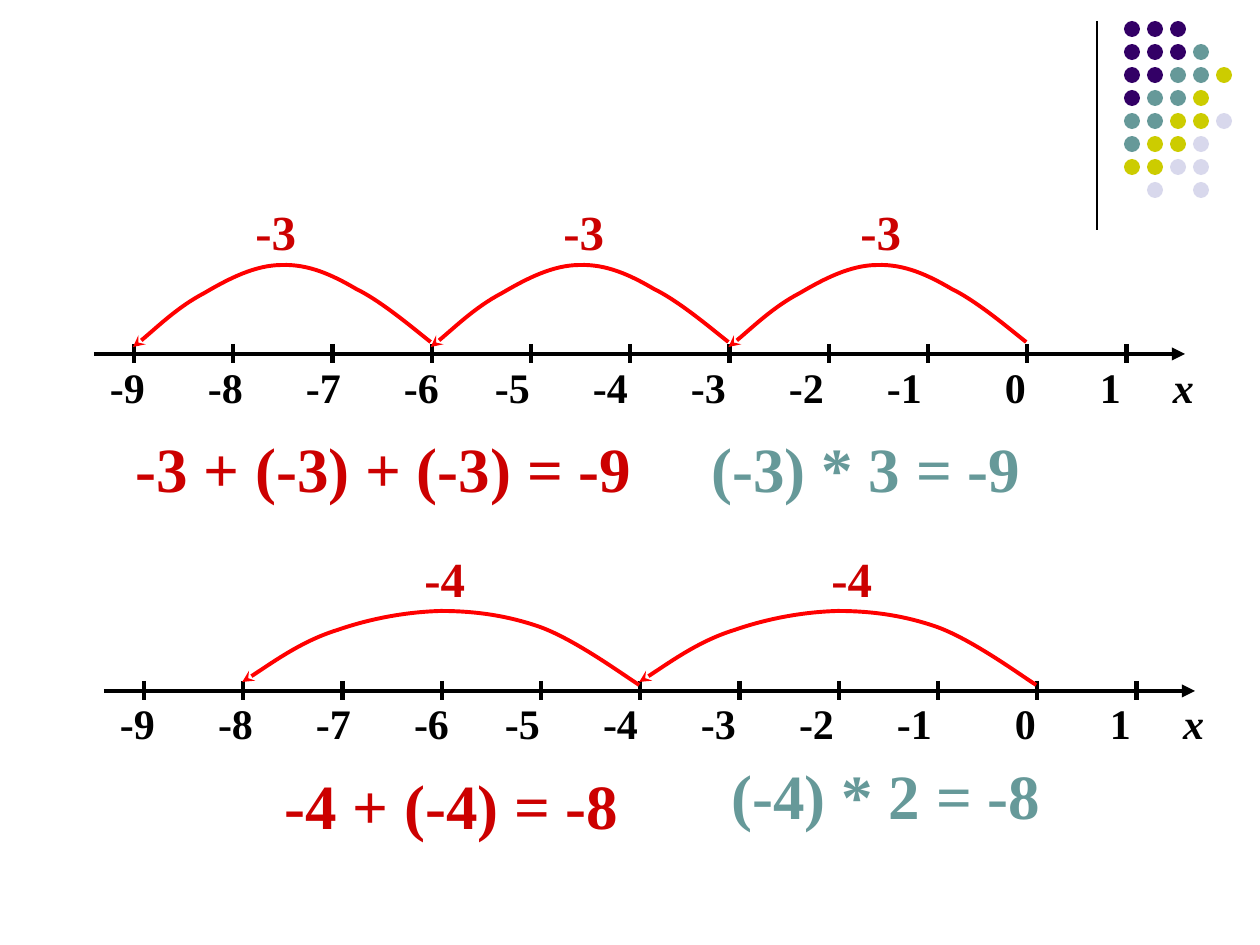
from lxml import etree
from pptx import Presentation
from pptx import util as u
from pptx.dml.color import RGBColor
from pptx.enum import shapes, text
from pptx.oxml import ns

PX = 914400 / 126
FONT = "Times New Roman"
BLACK, WHITE, RED, ARC_RED, TEAL = "000000", "FFFFFF", "CC0000", "FF0000", "669999"
DOT_COLORS = {"p": "330066", "t": TEAL, "y": "CCCC00", "l": "D8D8EC"}
DOT_ROWS = ["ppp", "pppt", "pptty", "ptty", "ttyyl", "tyyl", "yyll", " l l"]
TICKS, TICK_START, TICK_STEP, ZERO_TICK = 11, 100, 99.25, 9
LABEL_STOPS = [76, 174, 272, 370, 461, 559, 657, 755, 853, 971, 1066, 1139]
HOP_X = [0, 0.04, 0.16, 0.25, 0.33, 0.41, 0.5, 0.59, 0.68, 0.76, 0.85, 0.95, 1]
STEEP_HOP = [78, 69, 38, 25, 11, 0, 1, 1, 15, 29, 43, 72, 83]
FLAT_HOP = [74, 64, 29, 16, 5, 0, 0, 1, 8, 19, 30, 59, 71]


def px(*lengths):
    """Turn pixel lengths into a list of EMU."""
    return [u.Emu(round(length * PX)) for length in lengths]


def color(hex_string):
    """Return the colour of a hex string."""
    return RGBColor.from_string(hex_string)


def style_line(line, hex_string, width, arrowhead=None):
    """Set colour, width and end arrowhead of a line."""
    line.color.rgb = color(hex_string)
    line.width = u.Pt(width)
    if arrowhead:
        ln = line.color._xFill.getparent()
        etree.SubElement(ln, ns.qn("a:tailEnd"), type=arrowhead)


def style_run(run, size, hex_string, italic=False):
    """Format a run in the bold serif face."""
    run.font.name, run.font.size = FONT, u.Pt(size)
    run.font.bold, run.font.italic = True, italic
    run.font.color.rgb = color(hex_string)


def add_line(parent, x1, y1, x2, y2, width, arrowhead=None):
    """Draw a black straight line without shadow."""
    line = parent.add_connector(shapes.MSO_CONNECTOR.STRAIGHT, *px(x1, y1, x2, y2))
    style_line(line.line, BLACK, width, arrowhead)
    etree.SubElement(line._element.spPr, ns.qn("a:effectLst"))


def add_caption(slide, wording, box, size, hex_string):
    """Write one unwrapped line of text."""
    caption = slide.shapes.add_textbox(*px(*box))
    caption.text_frame.word_wrap = False
    caption.text_frame.auto_size = text.MSO_AUTO_SIZE.SHAPE_TO_FIT_TEXT
    caption.text_frame.text = wording
    style_run(caption.text_frame.paragraphs[0].runs[0], size, hex_string)


def add_corner_dots(slide, left, top):
    """Draw the corner rule and the triangle of dots."""
    add_line(slide.shapes, left, top, left, top + 209, 0.75)
    dots = slide.shapes.add_group_shape().shapes
    for row, keys in enumerate(DOT_ROWS):
        for column, key in enumerate(keys):
            if key in DOT_COLORS:
                place = px(left + 27 + 23 * column, top + 23 * row, 16, 16)
                dot = dots.add_shape(shapes.MSO_SHAPE.OVAL, *place)
                dot.shadow.inherit = False
                dot.fill.solid()
                dot.fill.fore_color.rgb = color(DOT_COLORS[key])
                dot.line.fill.background()


def add_labels(panel):
    """Write the axis numbers and the axis name at tab stops."""
    frame = panel.text_frame
    frame.word_wrap = True
    frame.vertical_anchor = text.MSO_ANCHOR.TOP
    frame.margin_left = frame.margin_right = frame.margin_bottom = 0
    frame.margin_top = px(67)[0]
    numbers = frame.paragraphs[0]
    numbers.text = "".join(f"\t{n - ZERO_TICK}" for n in range(TICKS)) + "\t"
    numbers.alignment = text.PP_ALIGN.LEFT
    stops = etree.SubElement(numbers._p.get_or_add_pPr(), ns.qn("a:tabLst"))
    for stop in px(*LABEL_STOPS):
        etree.SubElement(stops, ns.qn("a:tab"), pos=str(int(stop)), algn="l")
    style_run(numbers.runs[0], 24, BLACK)
    axis_name = numbers.add_run()
    axis_name.text = "х"
    style_run(axis_name, 24, BLACK, italic=True)


def add_hop(slide, start, top, span, heights):
    """Draw a curved arrow leftwards from a start point."""
    points = [(round((start - f * span) * PX), round((top + y) * PX))
              for f, y in zip(HOP_X, heights)]
    builder = slide.shapes.build_freeform(*points[0])
    builder.add_line_segments(points[1:], close=False)
    hop = builder.convert_to_shape()
    segments = hop._element.findall(".//" + ns.qn("a:lnTo"))
    for first in range(0, len(segments), 3):
        curve = etree.Element(ns.qn("a:cubicBezTo"))
        segments[first].addprevious(curve)
        for segment in segments[first:first + 3]:
            curve.append(segment[0])
            segment.getparent().remove(segment)
    hop.shadow.inherit = False
    hop.fill.background()
    style_line(hop.line, ARC_RED, 2.25, "stealth")


def add_number_line(slide, left, top, hop_size, hop_top, heights, hop_labels):
    """Draw a number line with equal hops down from zero."""
    group = slide.shapes.add_group_shape().shapes
    panel = group.add_shape(shapes.MSO_SHAPE.RECTANGLE, *px(left, top, 1181, 126))
    panel.shadow.inherit = False
    panel.fill.solid()
    panel.fill.fore_color.rgb = color(WHITE)
    style_line(panel.line, WHITE, 0.75)
    add_labels(panel)
    add_line(group, left + 60, top + 60, left + 1151, top + 60, 2.5, "triangle")
    for tick in range(TICKS):
        x = left + TICK_START + tick * TICK_STEP
        add_line(group, x, top + 50, x, top + 69, 2.5)
    for index, (x, y) in enumerate(hop_labels):
        start_tick = ZERO_TICK - index * hop_size
        start = left + TICK_START + start_tick * TICK_STEP - 1
        add_hop(slide, start, top + hop_top, hop_size * TICK_STEP, heights)
        add_caption(slide, f"-{hop_size}", (left + x, top + y, 67, 72), 28, RED)


def main():
    """Build the slide and save it."""
    deck = Presentation()
    deck.slide_width, deck.slide_height = px(1260, 945)
    slide = deck.slides.add_slide(deck.slide_layouts[6])
    add_corner_dots(slide, 1097, 21)
    add_number_line(slide, 34, 294, 3, -30, STEEP_HOP,
                    [(814, -99), (517, -99), (209, -99)])
    add_caption(slide, "-3 + (-3) + (-3) = -9", (123, 423, 522, 88), 36, RED)
    add_caption(slide, "(-3) * 3 = -9", (699, 423, 334, 88), 36, TEAL)
    add_number_line(slide, 44, 631, 4, -20, FLAT_HOP, [(775, -89), (368, -89)])
    add_caption(slide, "-4 + (-4) = -8", (272, 760, 359, 88), 36, RED)
    add_caption(slide, "(-4) * 2 = -8", (719, 750, 334, 88), 36, TEAL)
    deck.save("out.pptx")


if __name__ == "__main__":
    main()
